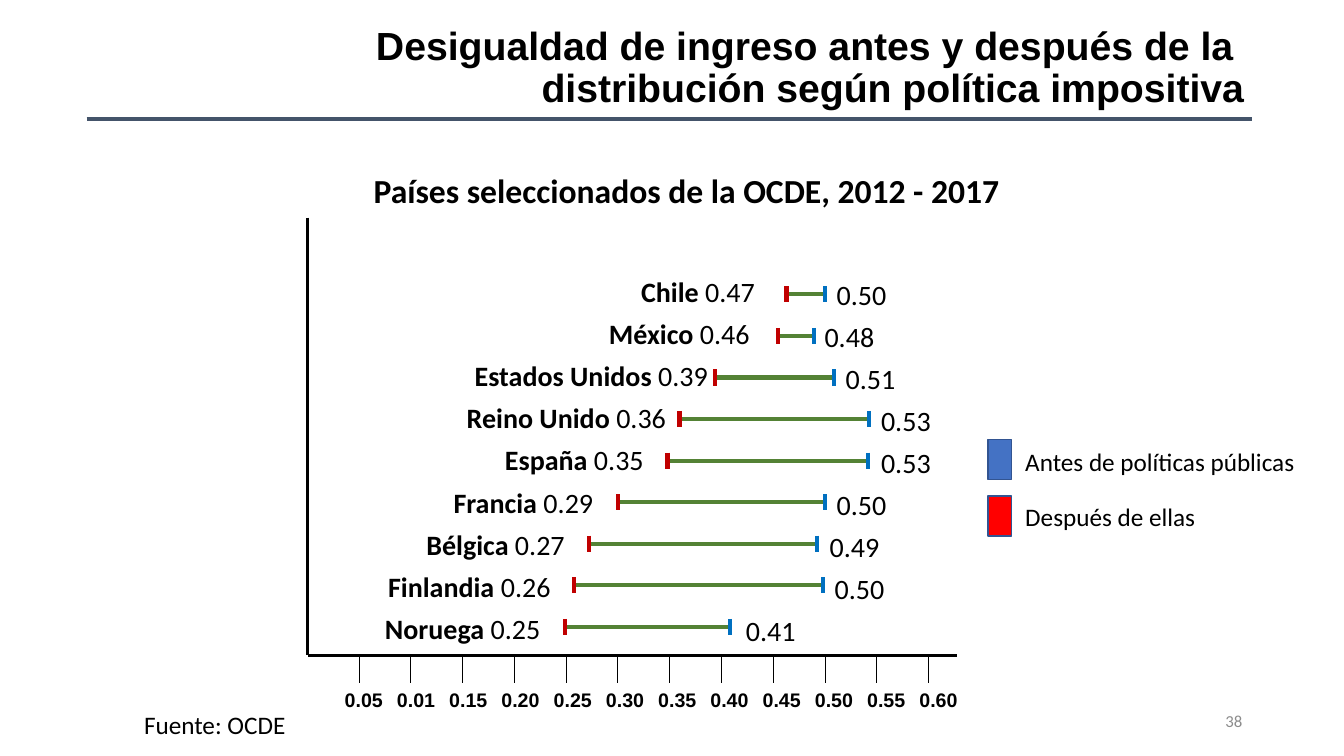
import lxml.etree
import pptx
import pptx.dml.color
import pptx.enum.shapes
import pptx.enum.text
import pptx.oxml.ns
import pptx.util

Inches = pptx.util.Inches
Pt = pptx.util.Pt
ALIGN = pptx.enum.text.PP_ALIGN
MIDDLE = pptx.enum.text.MSO_ANCHOR.MIDDLE

TITLE = ("Desigualdad de ingreso antes y después de la ", "distribución según política impositiva")
SUBTITLE = "Países seleccionados de la OCDE, 2012 - 2017"
SOURCE = "Fuente: OCDE"
PAGE_NUMBER = "38"

# country, after, before, label left, label width, after mark, before mark, value left
COUNTRIES = [
    ("Chile", "0.47", "0.50", 6.26, 1.34, 7.8, 8.18, 8.2),
    ("México", "0.46", "0.48", 5.94, 1.61, 7.72, 8.07, 8.08),
    ("Estados Unidos", "0.39", "0.51", 4.61, 2.53, 7.09, 8.27, 8.29),
    ("Reino Unido", "0.36", "0.53", 4.53, 2.19, 6.74, 8.62, 8.64),
    ("España", "0.35", "0.53", 4.91, 1.59, 6.62, 8.61, 8.64),
    ("Francia", "0.29", "0.50", 4.4, 1.6, 6.13, 8.18, 8.2),
    ("Bélgica", "0.27", "0.49", 4.13, 1.59, 5.84, 8.1, 8.13),
    ("Finlandia", "0.26", "0.50", 3.75, 1.82, 5.69, 8.16, 8.18),
    ("Noruega", "0.25", "0.41", 3.72, 1.76, 5.6, 7.24, 7.3),
]
TICKS = ["0.05", "0.01", "0.15", "0.20", "0.25", "0.30",
         "0.35", "0.40", "0.45", "0.50", "0.55", "0.60"]
# text, colour, swatch top, text top, text width
LEGEND = [
    ("Antes de políticas públicas", "4472C4", 4.36, 4.38, 2.9),
    ("Después de ellas", "FF0000", 4.92, 4.92, 1.91),
]

BLACK = "000000"
AXIS_LEFT, AXIS_RIGHT, AXIS_TOP, AXIS_BOTTOM = 3.05, 9.49, 2.16, 6.5
TICK_LENGTH = 0.28
CAP_HALF = 0.08


def color(hex_text):
    return pptx.dml.color.RGBColor.from_string(hex_text)


def add_span(para, text, size, font="Calibri", bold=False, tint=BLACK):
    span = para.add_run()
    span.text = text
    span.font.size = Pt(size)
    span.font.name = font
    span.font.bold = bold
    span.font.color.rgb = color(tint)


def add_text(page, left, top, width, height, spans, align=ALIGN.LEFT, wrap=False):
    """Add a one-paragraph box; each span holds the arguments of add_span."""
    box = page.shapes.add_textbox(Inches(left), Inches(top), Inches(width), Inches(height))
    box.text_frame.word_wrap = wrap
    para = box.text_frame.paragraphs[0]
    para.alignment = align
    for span in spans:
        add_span(para, *span)
    return box


def add_line(shapes, x1, y1, x2, y2, tint, weight):
    line = shapes.add_connector(pptx.enum.shapes.MSO_CONNECTOR.STRAIGHT,
                                Inches(x1), Inches(y1), Inches(x2), Inches(y2))
    line.line.color.rgb = color(tint)
    line.line.width = Pt(weight)
    properties = line._element.find(pptx.oxml.ns.qn("p:spPr"))
    lxml.etree.SubElement(properties, pptx.oxml.ns.qn("a:effectLst"))


def add_heading(page):
    title = page.shapes.title
    title.left, title.top = Inches(0.94), Inches(-0.04)
    title.width, title.height = Inches(11.5), Inches(1.45)
    title.text_frame.word_wrap = True
    title.text_frame.vertical_anchor = MIDDLE
    para = title.text_frame.paragraphs[0]
    para.alignment = ALIGN.RIGHT
    para.line_spacing = 0.9
    add_span(para, TITLE[0], 28, "Arial", True)
    para.add_line_break()
    add_span(para, TITLE[1], 28, "Arial", True)
    add_line(page.shapes, 0.86, 1.18, 12.42, 1.18, "44546A", 3)
    add_text(page, 3.3, 1.64, 7.02, 0.5, [(SUBTITLE, 24, "Calibri", True)], ALIGN.CENTER, True)


def add_axes(page):
    add_line(page.shapes, AXIS_LEFT, AXIS_BOTTOM, AXIS_RIGHT, AXIS_BOTTOM, BLACK, 2.25)
    add_line(page.shapes, AXIS_LEFT, AXIS_TOP, AXIS_LEFT, AXIS_BOTTOM, BLACK, 2.25)
    tick_step = (9.21 - 3.56) / (len(TICKS) - 1)
    label_step = (9.02 - 3.32) / (len(TICKS) - 1)
    for index, tick in enumerate(TICKS):
        x = 3.56 + index * tick_step
        add_line(page.shapes, x, AXIS_BOTTOM, x, AXIS_BOTTOM + TICK_LENGTH, BLACK, 0.5)
        add_text(page, 3.32 + index * label_step, AXIS_BOTTOM + TICK_LENGTH, 0.58, 0.34,
                 [(tick, 14, "Arial", True)])


def add_countries(page):
    last = len(COUNTRIES) - 1
    for index, country in enumerate(COUNTRIES):
        name, after, before, left, width, after_x, before_x, value_left = country
        share = index / last
        add_text(page, left, 2.67 + 3.35 * share, width, 0.44,
                 [(name, 20, "Calibri", True), (" " + after, 20)])
        add_text(page, value_left, 2.7 + 3.34 * share, 0.7, 0.44, [(before, 20)])
        y = 2.92 + 3.3 * share
        bar = page.shapes.add_group_shape().shapes
        add_line(bar, after_x, y, before_x, y, "548235", 3)
        for x, tint in ((after_x, "C00000"), (before_x, "0070C0")):
            add_line(bar, x, y - CAP_HALF, x, y + CAP_HALF, tint, 3)


def add_legend(page):
    for text, tint, swatch_top, text_top, width in LEGEND:
        swatch = page.shapes.add_shape(pptx.enum.shapes.MSO_SHAPE.RECTANGLE, Inches(9.8),
                                       Inches(swatch_top), Inches(0.23), Inches(0.4))
        swatch.shadow.inherit = False
        swatch.fill.solid()
        swatch.fill.fore_color.rgb = color(tint)
        swatch.line.color.rgb = color("325491")
        swatch.line.width = Pt(1)
        add_text(page, 10.07, text_top, width, 0.4, [(text, 18)])


def main():
    deck = pptx.Presentation()
    deck.slide_width, deck.slide_height = Inches(13.33), Inches(7.5)
    page = deck.slides.add_slide(deck.slide_layouts[5])
    add_heading(page)
    add_axes(page)
    add_countries(page)
    add_legend(page)
    add_text(page, 1.33, 6.99, 1.62, 0.4, [(SOURCE, 18)])
    number = add_text(page, 9.42, 6.95, 3, 0.4,
                      [(PAGE_NUMBER, 12, "Calibri", False, "8C8C8C")], ALIGN.RIGHT, True)
    number.text_frame.vertical_anchor = MIDDLE
    deck.save("out.pptx")


if __name__ == "__main__":
    main()
